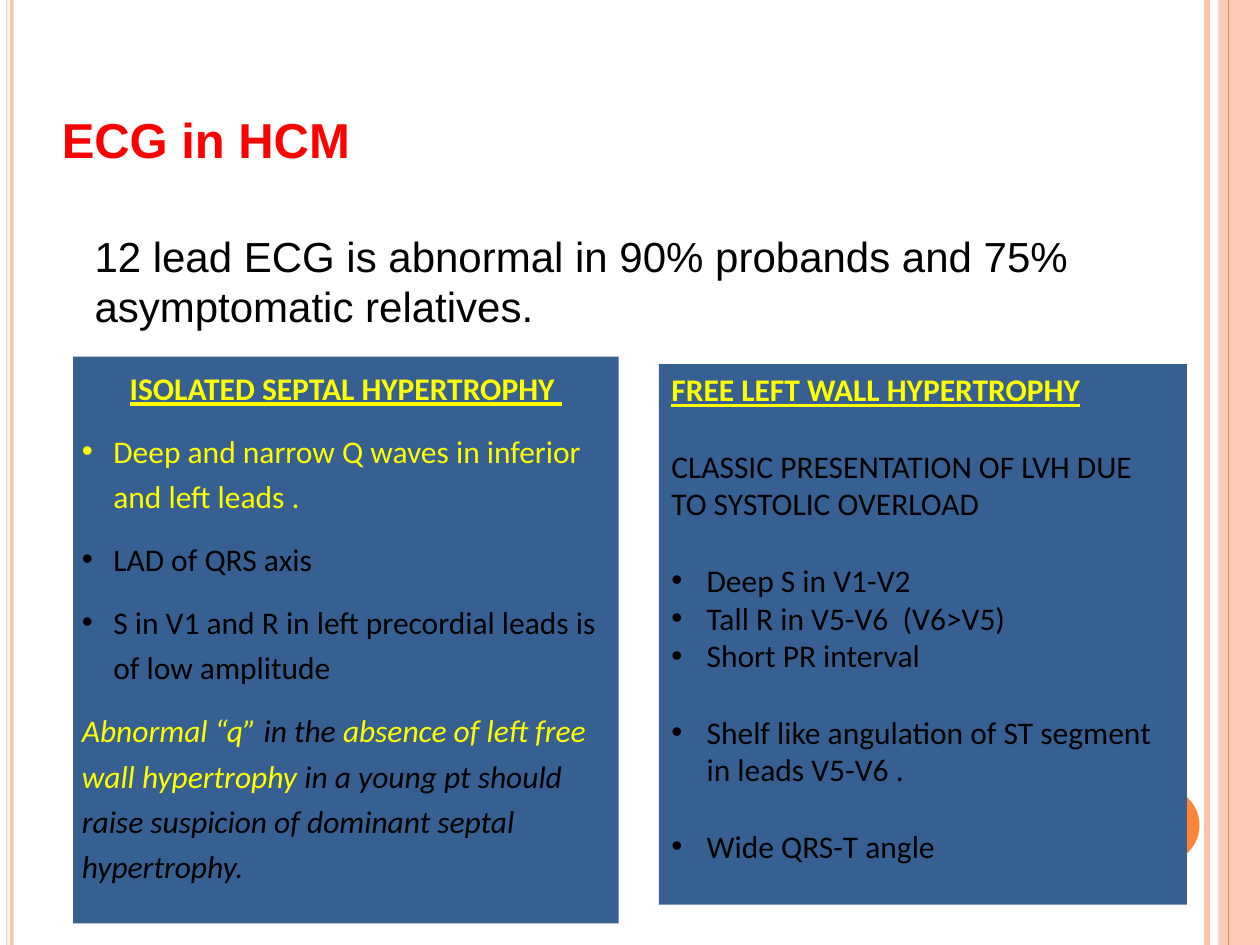
from dataclasses import dataclass

from lxml.etree import SubElement
from pptx import Presentation
from pptx.dml.color import RGBColor
from pptx.enum.shapes import MSO_CONNECTOR, MSO_SHAPE
from pptx.enum.text import MSO_ANCHOR, PP_ALIGN
from pptx.oxml.ns import qn
from pptx.util import Inches, Pt


@dataclass(frozen=True)
class Theme:
    """Colours, fonts and type sizes of the deck."""
    peach: str = "FDC3AD"
    orange: str = "FD8537"
    panel: str = "376092"
    red: str = "FF0000"
    yellow: str = "FFFF00"
    black: str = "000000"
    heading_font: str = "Arial"
    panel_font: str = "Calibri"
    title_size: int = 28
    lead_size: int = 24
    panel_size: int = 18
    blank_line: int = 22


THEME = Theme()


def add_block(page, shape_type, box, color, opacity=None):
    """Draw a borderless filled shape in the box and return it."""
    block = page.shapes.add_shape(shape_type, *map(Inches, box))
    block.shadow.inherit = False
    block.fill.solid()
    block.fill.fore_color.rgb = RGBColor.from_string(color)
    block.line.fill.background()
    if opacity is not None:
        fill_color = block.fill._xPr.find(qn("a:solidFill"))[0]
        SubElement(fill_color, qn("a:alpha"), val=str(opacity * 1000))
    return block


def add_rule(page, left, top, height, color, weight):
    """Draw a vertical line."""
    rule = page.shapes.add_connector(
        MSO_CONNECTOR.STRAIGHT, Inches(left), Inches(top), Inches(left), Inches(top + height))
    rule.line.color.rgb = RGBColor.from_string(color)
    rule.line.width = Pt(weight)
    SubElement(rule._element.spPr, qn("a:effectLst"))


def add_span(para, text, *, size=THEME.panel_size, font=THEME.panel_font,
             color=THEME.black, bold=False, italic=False, underline=False):
    """Append formatted text to a paragraph."""
    span = para.add_run()
    span.text = text
    span.font.size = Pt(size)
    span.font.name = font
    span.font.color.rgb = RGBColor.from_string(color)
    span.font.bold = bold
    span.font.italic = italic
    span.font.underline = underline


def format_para(para, *, align=PP_ALIGN.LEFT, before=0, spacing=1.0, bullet_indent=0):
    """Set alignment, spacing and an optional hanging bullet."""
    para.alignment = align
    para.space_before = Pt(before)
    para.line_spacing = spacing
    if bullet_indent:
        properties = para._p.get_or_add_pPr()
        properties.set("marL", str(Inches(bullet_indent)))
        properties.set("indent", str(-Inches(bullet_indent)))
        SubElement(properties, qn("a:buFont"), typeface="Arial")
        SubElement(properties, qn("a:buChar"), char="•")


def set_frame(shape, side=0, edge=0):
    """Prepare a wrapping, top-anchored text frame with the given insets."""
    frame = shape.text_frame
    frame.word_wrap = True
    frame.vertical_anchor = MSO_ANCHOR.TOP
    frame.margin_left = frame.margin_right = Inches(side)
    frame.margin_top = frame.margin_bottom = Inches(edge)
    return frame


def next_para(frame):
    """Return the unused first paragraph or a new one."""
    first = frame.paragraphs[0]
    return frame.add_paragraph() if first.runs else first


def add_text(page, box, text, **style):
    """Place one paragraph of text in the box."""
    frame = set_frame(page.shapes.add_textbox(*map(Inches, box)))
    add_span(frame.paragraphs[0], text, **style)


def add_frame_art(page, box):
    """Draw the stripes and the disc along the sides of the box."""
    left, top, width, height = box
    right = left + width
    add_rule(page, right - 0.42, top, height, THEME.peach, 3)
    add_block(page, MSO_SHAPE.OVAL, (right - 1.08, top + 6.25, 0.6, 0.6), THEME.orange)
    for offset, stripe in ((0.05, 0.01), (0.08, 0.03)):
        add_block(page, MSO_SHAPE.RECTANGLE, (left + offset, top, stripe, height), THEME.peach)
    add_block(page, MSO_SHAPE.RECTANGLE, (right - 0.33, top, 0.33, height), THEME.peach, 87)
    add_rule(page, right - 0.25, top, height, THEME.orange, 1)


def add_septal_panel(page, box):
    """Place the isolated septal hypertrophy panel in the box."""
    frame = set_frame(add_block(page, MSO_SHAPE.RECTANGLE, box, THEME.panel), 0.07, 0.04)
    rhythm = {"before": 10, "spacing": 1.2}
    heading = next_para(frame)
    format_para(heading, align=PP_ALIGN.CENTER, **rhythm)
    add_span(heading, "ISOLATED SEPTAL HYPERTROPHY ", color=THEME.yellow,
             bold=True, underline=True)
    findings = (
        ("Deep and narrow Q waves in inferior and left leads .", THEME.yellow),
        ("LAD of QRS axis", THEME.black),
        ("S in V1 and R in left precordial leads is of low amplitude", THEME.black),
    )
    for text, color in findings:
        para = next_para(frame)
        format_para(para, bullet_indent=0.25, **rhythm)
        add_span(para, text, color=color)
    remark = next_para(frame)
    format_para(remark, **rhythm)
    for text, color in (
        ("Abnormal “q”", THEME.yellow),
        (" in the ", THEME.black),
        ("absence of left free wall hypertrophy", THEME.yellow),
        (" in a young pt should raise suspicion of dominant septal hypertrophy.", THEME.black),
    ):
        add_span(remark, text, color=color, italic=True)


def add_free_wall_panel(page, box):
    """Place the free left wall hypertrophy panel in the box."""
    frame = set_frame(add_block(page, MSO_SHAPE.RECTANGLE, box, THEME.panel), 0.1, 0.05)
    heading = next_para(frame)
    format_para(heading)
    add_span(heading, "FREE LEFT WALL HYPERTROPHY", color=THEME.yellow,
             bold=True, underline=True)
    summary = next_para(frame)
    format_para(summary, before=THEME.blank_line)
    add_span(summary, "CLASSIC PRESENTATION OF LVH DUE TO SYSTOLIC OVERLOAD")
    groups = (
        ("Deep S in V1-V2", "Tall R in V5-V6  (V6>V5)", "Short PR interval"),
        ("Shelf like angulation of ST segment in leads V5-V6 .",),
        ("Wide QRS-T angle",),
    )
    for group in groups:
        for index, text in enumerate(group):
            para = next_para(frame)
            format_para(para, before=0 if index else THEME.blank_line, bullet_indent=0.28)
            add_span(para, text)


def main():
    """Build and save the deck."""
    deck = Presentation()
    deck.slide_width, deck.slide_height = Inches(10), Inches(7.5)
    page = deck.slides.add_slide(deck.slide_layouts[6])
    add_frame_art(page, (0, 0, 10, 7.5))
    add_text(page, (0.49, 0.87, 8.49, 0.47), "ECG in HCM", size=THEME.title_size,
             font=THEME.heading_font, color=THEME.red, bold=True)
    add_text(page, (0.75, 1.83, 8.49, 0.81),
             "12 lead ECG is abnormal in 90% probands and 75% asymptomatic relatives.",
             size=THEME.lead_size, font=THEME.heading_font)
    add_septal_panel(page, (0.58, 2.83, 4.33, 4.5))
    add_free_wall_panel(page, (5.23, 2.89, 4.19, 4.29))
    deck.save("out.pptx")


if __name__ == "__main__":
    main()
